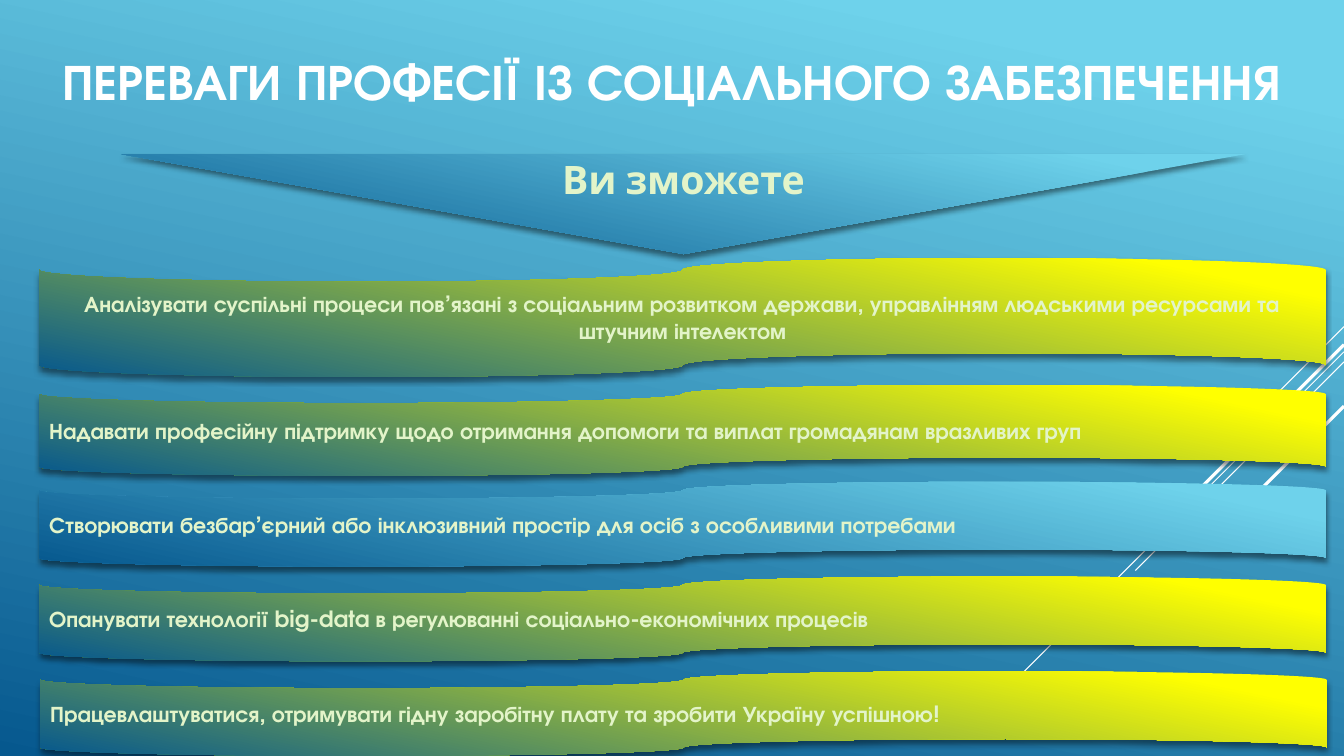
from lxml import etree
from pptx import Presentation
from pptx import util as u
from pptx.dml.color import RGBColor
from pptx.enum import shapes, text
from pptx.oxml.ns import qn

WHITE = RGBColor(0xFF, 0xFF, 0xFF)
CREAM = RGBColor(0xE3, 0xF4, 0xC9)
SKY = RGBColor(0x6E, 0xD2, 0xEB)
NAVY = RGBColor(0x06, 0x58, 0x8E)
YELLOW = RGBColor(0xFF, 0xFF, 0x00)
HEAD_FONT = "TeX Gyre Adventor"
ARROW_FONT = "Cabin"
CENTER, LEFT = text.PP_ALIGN.CENTER, text.PP_ALIGN.LEFT

TITLE = "ПЕРЕВАГИ ПРОФЕСІЇ ІЗ СОЦІАЛЬНОГО ЗАБЕЗПЕЧЕННЯ"
ARROW = "Ви зможете"
SLIDE_W, SLIDE_H = 13.33, 7.5
BAR_W = 12.76
BARS = [
    ("Аналізувати суспільні процеси пов’язані з соціальним розвитком держави, "
     "управлінням людськими ресурсами та штучним інтелектом",
     0.39, 2.56, 1.18, YELLOW, CENTER),
    ("Надавати професійну підтримку щодо отримання допомоги та виплат "
     "громадянам вразливих груп", 0.39, 3.82, 0.9, YELLOW, LEFT),
    ("Створювати безбар’єрний або інклюзивний простір для осіб з особливими "
     "потребами", 0.39, 4.78, 0.84, SKY, LEFT),
    ("Опанувати технології big-data в регулюванні соціально-економічних "
     "процесів", 0.39, 5.72, 0.84, YELLOW, LEFT),
    ("Працевлаштуватися, отримувати гідну заробітну плату та зробити Україну "
     "успішною!", 0.4, 6.66, 0.84, YELLOW, LEFT),
]
RAYS = [(3.24, 1.0, 0.75), (3.49, 3.26, 0.75), (3.59, 2.07, 0.75),
        (3.42, 1.91, 2.25), (4.03, 1.39, 2.25)]


def set_gradient(fill, start):
    fill.gradient()
    fill.gradient_angle = 360 - 102
    for stop, color, position in zip(fill.gradient_stops, (start, NAVY), (0.1, 1)):
        stop.color.rgb = color
        stop.position = position


def add_shadow(sp):
    sp.shadow.inherit = False
    effects = sp._element.spPr.find(qn("a:effectLst"))
    outer = etree.SubElement(effects, qn("a:outerShdw"), blurRad=str(u.Pt(4)),
                             dist=str(u.Pt(3)), dir=str(90 * 60000), rotWithShape="0")
    color = etree.SubElement(outer, qn("a:srgbClr"), val="000000")
    etree.SubElement(color, qn("a:alpha"), val="46000")


def write(sp, words, size=16, font=HEAD_FONT, color=CREAM, align=CENTER):
    tf = sp.text_frame
    tf.word_wrap = True
    tf.vertical_anchor = text.MSO_ANCHOR.MIDDLE
    p = tf.paragraphs[0]
    p.alignment = align
    r = p.add_run()
    r.text = words
    r.font.size = u.Pt(size)
    r.font.name = font
    r.font.bold = True
    r.font.color.rgb = color


def add_panel(s, kind, box, start):
    sp = s.shapes.add_shape(kind, *map(u.Inches, box))
    set_gradient(sp.fill, start)
    sp.line.fill.background()
    add_shadow(sp)
    return sp


def add_ray(s, top, reach, width):
    line = s.shapes.add_connector(
        shapes.MSO_CONNECTOR.STRAIGHT, u.Inches(SLIDE_W), u.Inches(top),
        u.Inches(SLIDE_W - reach), u.Inches(top + reach))
    line.line.color.rgb = WHITE
    line.line.width = u.Pt(width)
    etree.SubElement(line._element.spPr, qn("a:effectLst"))


def main():
    prs = Presentation()
    prs.slide_width, prs.slide_height = u.Inches(SLIDE_W), u.Inches(SLIDE_H)
    s = prs.slides.add_slide(prs.slide_layouts[6])
    set_gradient(s.background.fill, SKY)

    for ray in RAYS:
        add_ray(s, *ray)

    title = s.shapes.add_textbox(*map(u.Inches, (0, 0.05, SLIDE_W, 1.49)))
    write(title, TITLE, size=36, color=WHITE)

    arrow = add_panel(s, shapes.MSO_SHAPE.FLOWCHART_MERGE, (1.21, 1.53, 11.14, 0.99), SKY)
    write(arrow, ARROW, size=28, font=ARROW_FONT)

    for words, left, top, height, start, align in BARS:
        bar = add_panel(s, shapes.MSO_SHAPE.FLOWCHART_PUNCHED_TAPE,
                        (left, top, BAR_W, height), start)
        write(bar, words, align=align)

    prs.save("out.pptx")


if __name__ == "__main__":
    main()
